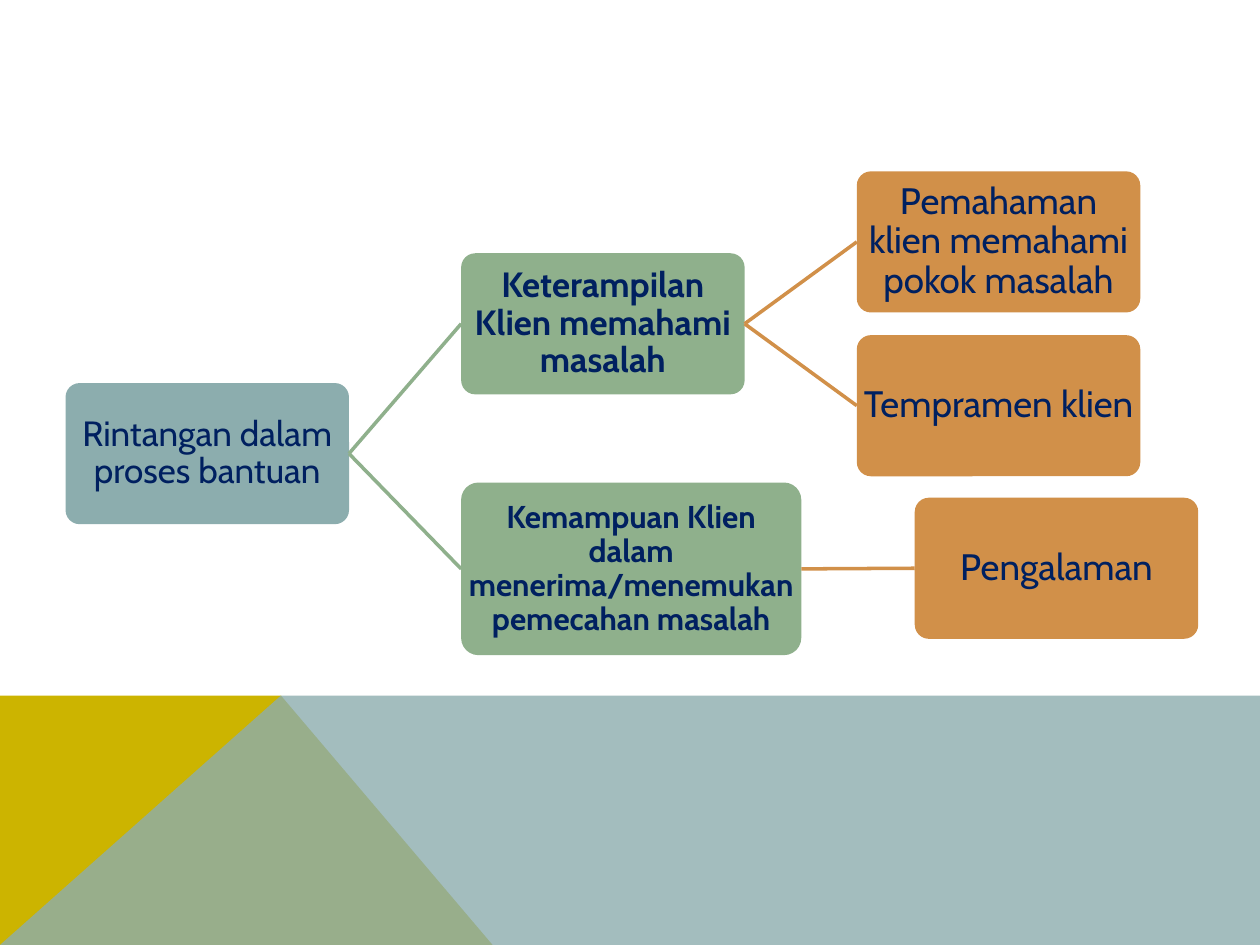
from dataclasses import dataclass

from lxml.etree import SubElement
from pptx import Presentation
from pptx.dml.color import RGBColor
from pptx.enum.shapes import MSO_CONNECTOR, MSO_SHAPE
from pptx.enum.text import MSO_ANCHOR, PP_ALIGN
from pptx.oxml.ns import qn
from pptx.shapes.autoshape import Shape
from pptx.slide import Slide
from pptx.util import Inches, Pt

NAVY = RGBColor(0x00, 0x20, 0x60)
TEAL = RGBColor(0x8C, 0xAD, 0xAE)
GREEN = RGBColor(0x8F, 0xB0, 0x8C)
ORANGE = RGBColor(0xD1, 0x90, 0x49)
MUSTARD = RGBColor(0xCC, 0xB4, 0x00)
FONT = "Cabin"
RIGHT_SIDE, LEFT_SIDE = 3, 1


@dataclass(frozen=True)
class Node:
    text: str
    left: float
    top: float
    color: RGBColor
    size: int
    bold: bool = False
    width: float = 2.25
    height: float = 1.12


@dataclass(frozen=True)
class Band:
    points: tuple[tuple[float, float], ...]
    color: RGBColor
    opacity: int = 100


BANDS = (
    Band(((0, 7.5), (0, 5.52), (2.23, 5.52), (3.91, 7.5)), MUSTARD),
    Band(((0, 7.5), (2.23, 5.52), (10, 5.52), (10, 7.5)), TEAL, opacity=80),
)

OBSTACLES = Node("Rintangan dalam proses bantuan", 0.52, 3.04, TEAL, 20)
SKILL = Node("Keterampilan Klien memahami masalah", 3.66, 2.01, GREEN, 20, bold=True)
ABILITY = Node("Kemampuan Klien dalam menerima/menemukan pemecahan masalah",
               3.66, 3.83, GREEN, 18, bold=True, width=2.7, height=1.37)
UNDERSTANDING = Node("Pemahaman klien memahami pokok masalah", 6.8, 1.36, ORANGE, 21)
TEMPERAMENT = Node("Tempramen klien", 6.8, 2.66, ORANGE, 21)
EXPERIENCE = Node("Pengalaman", 7.26, 3.95, ORANGE, 21)

NODES = (OBSTACLES, SKILL, ABILITY, UNDERSTANDING, TEMPERAMENT, EXPERIENCE)
LINKS = (
    (OBSTACLES, SKILL),
    (OBSTACLES, ABILITY),
    (SKILL, UNDERSTANDING),
    (SKILL, TEMPERAMENT),
    (ABILITY, EXPERIENCE),
)


def paint(shape: Shape, color: RGBColor) -> None:
    shape.shadow.inherit = False
    shape.fill.solid()
    shape.fill.fore_color.rgb = color
    shape.line.fill.background()


def draw_band(slide: Slide, band: Band) -> None:
    start, *others = [(Inches(x), Inches(y)) for x, y in band.points]
    builder = slide.shapes.build_freeform(*start)
    builder.add_line_segments(others, close=True)
    shape = builder.convert_to_shape()
    paint(shape, band.color)
    if band.opacity < 100:
        color_element = shape.element.spPr.find(f"{qn('a:solidFill')}/{qn('a:srgbClr')}")
        SubElement(color_element, qn("a:alpha"), val=str(band.opacity * 1000))


def draw_node(slide: Slide, node: Node) -> Shape:
    shape = slide.shapes.add_shape(
        MSO_SHAPE.ROUNDED_RECTANGLE,
        Inches(node.left), Inches(node.top), Inches(node.width), Inches(node.height))
    shape.adjustments[0] = 0.1
    paint(shape, node.color)

    frame = shape.text_frame
    frame.word_wrap = True
    frame.vertical_anchor = MSO_ANCHOR.MIDDLE
    frame.margin_left = frame.margin_right = Inches(0.01)
    frame.margin_top = frame.margin_bottom = Inches(0.01)

    paragraph = frame.paragraphs[0]
    paragraph.alignment = PP_ALIGN.CENTER
    paragraph.line_spacing = 0.9
    run = paragraph.add_run()
    run.text = node.text
    run.font.name = FONT
    run.font.size = Pt(node.size)
    run.font.bold = node.bold
    run.font.color.rgb = NAVY
    return shape


def draw_link(slide: Slide, parent: Shape, child: Shape, color: RGBColor) -> None:
    connector = slide.shapes.add_connector(MSO_CONNECTOR.STRAIGHT, 0, 0, 0, 0)
    connector.begin_connect(parent, RIGHT_SIDE)
    connector.end_connect(child, LEFT_SIDE)
    connector.line.color.rgb = color
    connector.line.width = Pt(2)
    SubElement(connector.element.spPr, qn("a:effectLst"))


def main() -> None:
    presentation = Presentation()
    presentation.slide_width = Inches(10)
    presentation.slide_height = Inches(7.5)
    slide = presentation.slides.add_slide(presentation.slide_layouts[6])

    # Coloured bands along the bottom
    for band in BANDS:
        draw_band(slide, band)

    # Tree of obstacles, each link in its child's colour
    shapes = {node: draw_node(slide, node) for node in NODES}
    for parent, child in LINKS:
        draw_link(slide, shapes[parent], shapes[child], child.color)

    presentation.save("out.pptx")


if __name__ == "__main__":
    main()
